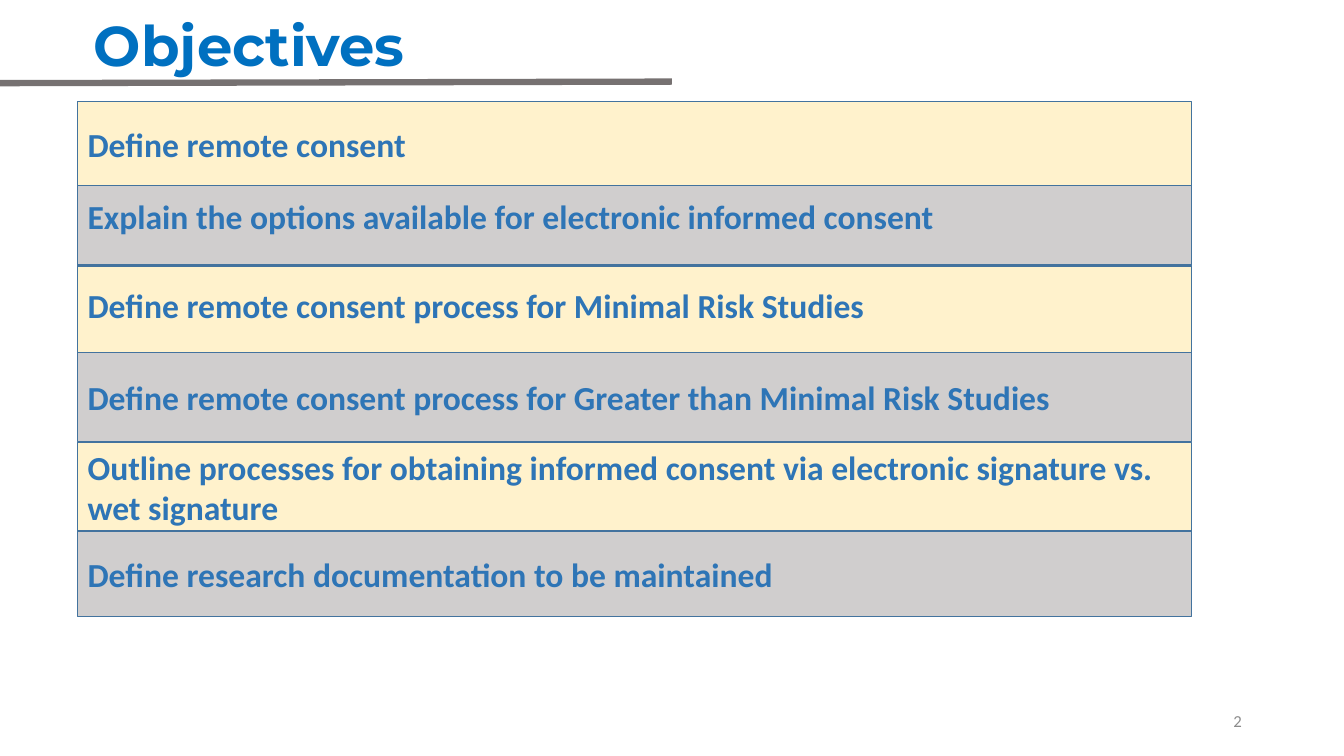
from lxml.etree import SubElement
from pptx import Presentation
from pptx.dml.color import RGBColor
from pptx.enum.shapes import MSO_CONNECTOR as Connector, MSO_SHAPE as Shape
from pptx.enum.text import MSO_ANCHOR as Anchor, PP_ALIGN as Align
from pptx.oxml.ns import qn
from pptx.util import Pt

COLORS = {
    "title": "0070C0",
    "objective": "2E75B6",
    "cream": "FFF2CC",
    "gray": "D0CECE",
    "border": "43739E",
    "rule": "767171",
    "number": "8C8C8C",
}
BAND_LEFT, BAND_WIDTH = 55.44, 795.6
OBJECTIVES = [
    ("Explain the options available for electronic informed consent", 119.5, 69.8, "gray", 3.6),
    ("Define remote consent process for Minimal Risk Studies", 190, 69.8, "cream", 17),
    ("Define remote consent process for Greater than Minimal Risk Studies", 252, 63.4, "gray", 3.6),
    ("Outline processes for obtaining informed consent via electronic signature vs. wet signature",
     316, 63.4, "cream", 3.6),
    ("Define research documentation to be maintained", 379.4, 61.2, "gray", 3.6),
    ("Define remote consent", 72.7, 59.8, "cream", 3.6),
]


def rgb(name):
    return RGBColor.from_string(COLORS[name])


def write(frame, text, font_name, size, color, bold=False, align=Align.LEFT, anchor=Anchor.MIDDLE):
    frame.word_wrap = True
    frame.vertical_anchor = anchor
    paragraph = frame.paragraphs[0]
    paragraph.text = text
    paragraph.alignment = align
    font = paragraph.font
    font.name, font.size, font.bold = font_name, Pt(size), bold
    font.color.rgb = rgb(color)


def add_label(slide, box, *args, **style):
    frame = slide.shapes.add_textbox(*map(Pt, box)).text_frame
    write(frame, *args, **style)
    return frame


def add_rule(slide, start, end):
    rule = slide.shapes.add_connector(Connector.STRAIGHT, *map(Pt, start + end))
    rule.line.color.rgb = rgb("rule")
    rule.line.width = Pt(4.5)
    SubElement(rule._element.spPr, qn("a:effectLst"))


def add_objective(slide, text, top, height, fill, bottom_inset):
    band = slide.shapes.add_shape(
        Shape.RECTANGLE, Pt(BAND_LEFT), Pt(top), Pt(BAND_WIDTH), Pt(height))
    band.shadow.inherit = False
    band.fill.solid()
    band.fill.fore_color.rgb = rgb(fill)
    band.line.color.rgb = rgb("border")
    band.line.width = Pt(1)
    band.text_frame.margin_bottom = Pt(bottom_inset)
    write(band.text_frame, text, "Calibri", 24, "objective", bold=True)


def main():
    deck = Presentation()
    deck.slide_width, deck.slide_height = Pt(960), Pt(540)
    slide = deck.slides.add_slide(deck.slide_layouts[6])
    add_label(slide, (678.25, 500.5, 216, 28.8), "2", "Calibri", 12, "number", align=Align.RIGHT)
    add_rule(slide, (0, 59.4), (480, 58.3))
    title = add_label(slide, (45.4, -18.7, 625.7, 77.8), "Objectives", "Montserrat", 40, "title",
                      bold=True, anchor=Anchor.BOTTOM)
    title.margin_left = Pt(21.7)
    for objective in OBJECTIVES:
        add_objective(slide, *objective)
    deck.save("out.pptx")


if __name__ == "__main__":
    main()
